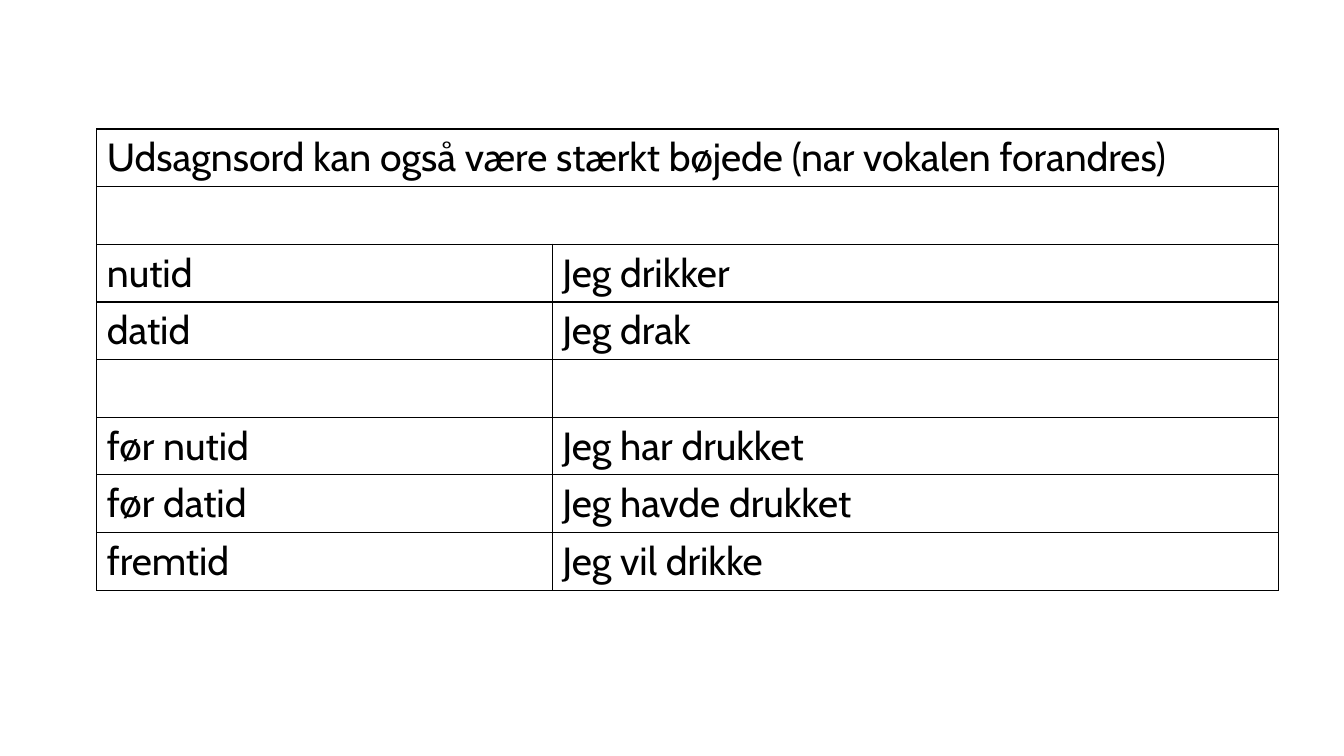
from lxml import etree
from pptx import Presentation, util as u
from pptx.dml.color import RGBColor
from pptx.enum import text
from pptx.oxml import ns

COLORS = {"ink": "000000", "paper": "FFFFFF"}
HEADING = "Udsagnsord kan også være stærkt bøjede (nar vokalen forandres)"
ROWS = [
    (HEADING, ""),
    ("", ""),
    ("nutid", "Jeg drikker"),
    ("datid", "Jeg drak"),
    ("", ""),
    ("før nutid", "Jeg har drukket"),
    ("før datid", "Jeg havde drukket"),
    ("fremtid", "Jeg vil drikke"),
]
FULL_WIDTH_ROWS = (0, 1)


def add_text(tf, content, font="Cabin", size=28, color="ink", bold=False):
    p = tf.paragraphs[0]
    p.alignment = text.PP_ALIGN.LEFT
    if not content:
        return
    r = p.add_run()
    r.text = content
    r.font.name = font
    r.font.size = u.Pt(size)
    r.font.bold = bold
    r.font.color.rgb = RGBColor.from_string(COLORS[color])


class SlideBuilder:
    def __init__(self, prs, border_width=1):
        self.border_width = u.Pt(border_width)
        self.s = prs.slides.add_slide(prs.slide_layouts[6])

    def border(self, cell):
        tc_pr = cell._tc.get_or_add_tcPr()
        for i, side in enumerate(("lnL", "lnR", "lnT", "lnB")):
            ln = etree.Element(ns.qn(f"a:{side}"), w=str(self.border_width))
            fill = etree.SubElement(ln, ns.qn("a:solidFill"))
            etree.SubElement(fill, ns.qn("a:srgbClr"), val=COLORS["ink"])
            tc_pr.insert(i, ln)

    def table(self, rows, left, top, widths, row_height):
        sp = self.s.shapes.add_table(
            len(rows), len(widths), u.Cm(left), u.Cm(top),
            u.Cm(sum(widths)), u.Cm(row_height * len(rows)))
        table = sp.table
        table.first_row = False
        table.horz_banding = False
        for column, width in zip(table.columns, widths):
            column.width = u.Cm(width)
        for i, row in enumerate(rows):
            table.rows[i].height = u.Cm(row_height)
            for j, content in enumerate(row):
                cell = table.cell(i, j)
                cell.fill.solid()
                cell.fill.fore_color.rgb = RGBColor.from_string(COLORS["paper"])
                self.border(cell)
                add_text(cell.text_frame, content)
        return table


def main():
    prs = Presentation()
    prs.slide_width = u.Cm(33.87)
    prs.slide_height = u.Cm(19.05)
    slide = SlideBuilder(prs)
    table = slide.table(ROWS, left=2.44, top=3.25, widths=(11.48, 18.29), row_height=1.45)
    for i in FULL_WIDTH_ROWS:
        table.cell(i, 0).merge(table.cell(i, 1))
    prs.save("out.pptx")


if __name__ == "__main__":
    main()
